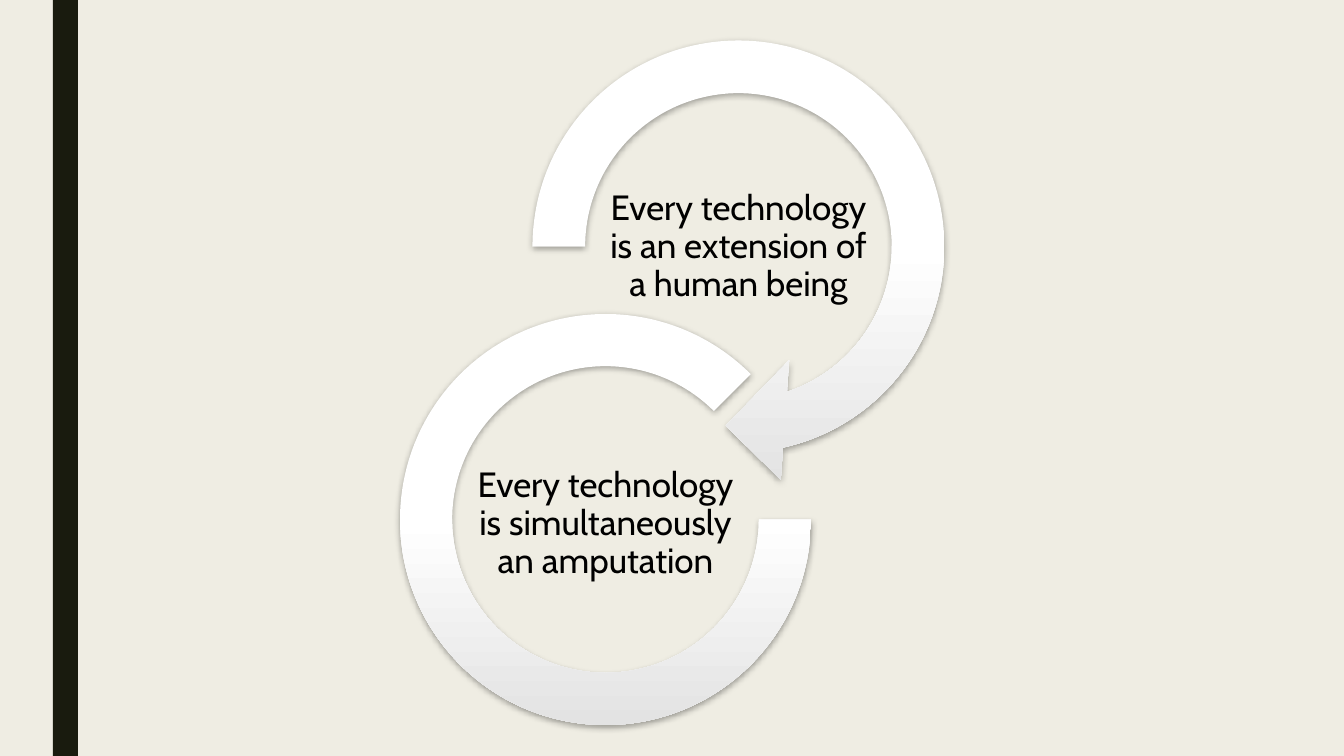
from copy import deepcopy

from lxml.etree import SubElement
from pptx import Presentation
from pptx.dml.color import RGBColor
from pptx.enum.shapes import MSO_SHAPE
from pptx.enum.text import MSO_ANCHOR, PP_ALIGN
from pptx.oxml.ns import qn
from pptx.util import Inches, Pt

PIXELS_PER_INCH = 100.8
CREAM = RGBColor(0xEF, 0xED, 0xE3)
DARK_OLIVE = RGBColor(0x19, 0x1B, 0x0E)
WHITE = RGBColor(0xFF, 0xFF, 0xFF)
LIGHT_GREY = RGBColor(0xE3, 0xE3, 0xE3)
BLACK = RGBColor(0x00, 0x00, 0x00)


def px(*lengths):
    return [Inches(length / PIXELS_PER_INCH) for length in lengths]


class SlideBuilder:
    """Draws the styled elements of one slide."""

    font_name = "Cabin"
    font_size = Pt(25)

    def __init__(self, slide):
        self.slide = slide
        background = slide.background.fill
        background.solid()
        background.fore_color.rgb = CREAM

    def add_shape(self, kind, box):
        shape = self.slide.shapes.add_shape(kind, *px(*box))
        shape.shadow.inherit = False
        shape.line.fill.background()
        return shape

    def add_bar(self, box):
        shape = self.add_shape(MSO_SHAPE.RECTANGLE, box)
        shape.fill.solid()
        shape.fill.fore_color.rgb = DARK_OLIVE

    def add_ring(self, kind, box, adjustments):
        shape = self.add_shape(kind, box)
        for index, value in enumerate(adjustments):
            shape.adjustments[index] = value
        self.apply_gradient(shape)
        self.apply_shadow(shape)

    def apply_gradient(self, shape):
        shape.fill.gradient()
        shape.fill.gradient_angle = 270
        stop_list = shape._element.spPr.find(".//" + qn("a:gsLst"))
        stop_list.insert(1, deepcopy(stop_list[0]))
        stops = [(0, WHITE), (0.5, WHITE), (1, LIGHT_GREY)]
        for stop, (position, color) in zip(shape.fill.gradient_stops, stops):
            stop.position = position
            stop.color.rgb = color

    def apply_shadow(self, shape):
        effects = shape._element.spPr.find(qn("a:effectLst"))
        shadow = SubElement(
            effects, qn("a:outerShdw"), blurRad=str(Pt(4.5)), dist=str(Pt(1.5)),
            dir="5400000", algn="ctr", rotWithShape="0")
        color = SubElement(shadow, qn("a:srgbClr"), val=str(BLACK))
        SubElement(color, qn("a:alpha"), val="35000")

    def add_label(self, box, text):
        frame = self.slide.shapes.add_textbox(*px(*box)).text_frame
        frame.word_wrap = True
        frame.vertical_anchor = MSO_ANCHOR.MIDDLE
        inset, = px(2)
        frame.margin_left = frame.margin_right = inset
        frame.margin_top = frame.margin_bottom = inset
        paragraph = frame.paragraphs[0]
        paragraph.alignment = PP_ALIGN.CENTER
        paragraph.line_spacing = 0.9
        run = paragraph.add_run()
        run.text = text
        run.font.name = self.font_name
        run.font.size = self.font_size
        run.font.color.rgb = BLACK


def main():
    presentation = Presentation()
    presentation.slide_width, presentation.slide_height = px(1344, 756)
    slide = presentation.slides.add_slide(presentation.slide_layouts[6])
    builder = SlideBuilder(slide)
    builder.add_bar((53, 0, 25, 756))
    builder.add_ring(MSO_SHAPE.CIRCULAR_ARROW, (499, 7, 479, 479),
                     (0.11, 11.42, 45, 108, 0.125))
    builder.add_label((605, 180, 267, 134),
                      "Every technology is an extension of a human being")
    builder.add_ring(MSO_SHAPE.BLOCK_ARC, (400, 314, 411, 411),
                     (0, 189, 0.127))
    builder.add_label((472, 457, 267, 134),
                      "Every technology is simultaneously an amputation")
    presentation.save("out.pptx")


if __name__ == "__main__":
    main()
